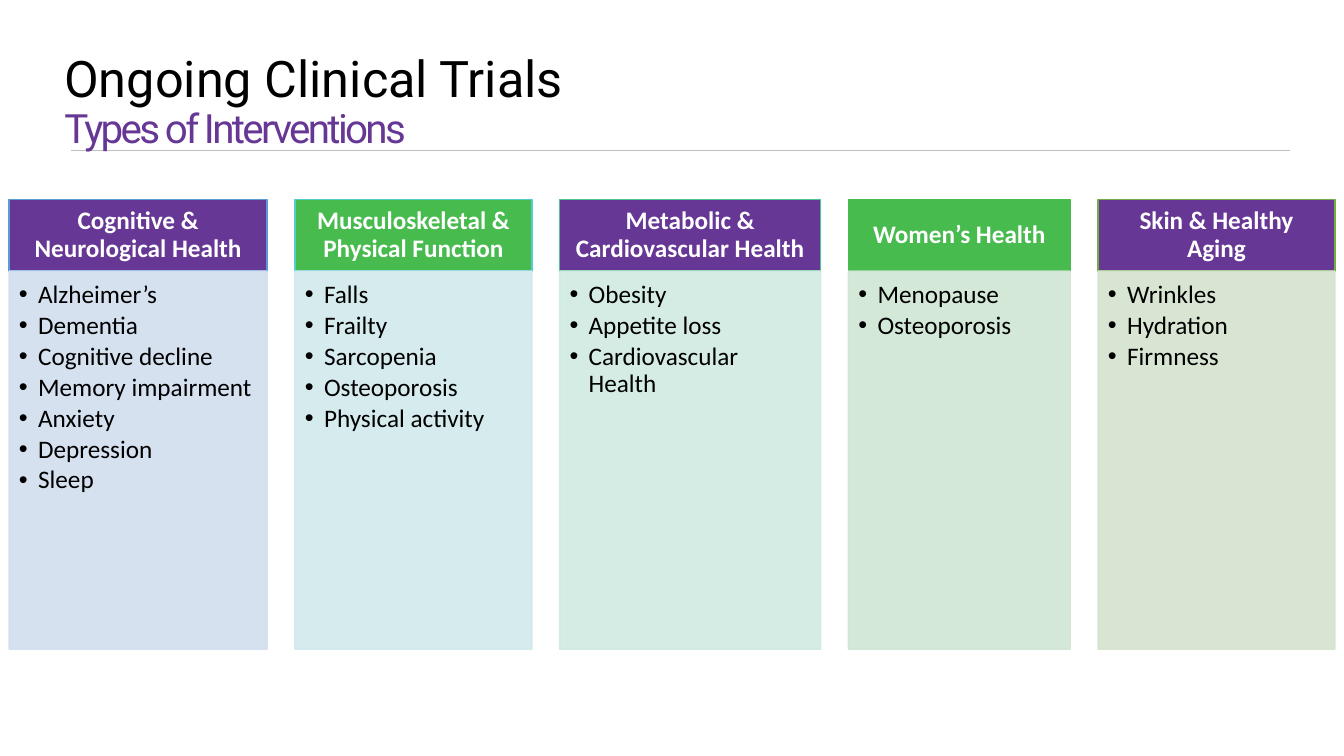
from lxml.etree import SubElement
from pptx import Presentation
from pptx.dml.color import RGBColor
from pptx.enum.shapes import MSO_CONNECTOR, MSO_SHAPE
from pptx.enum.text import MSO_ANCHOR, PP_ALIGN
from pptx.oxml.ns import qn
from pptx.util import Inches, Pt

COLORS = {
    "purple": "663795",
    "green": "48BB4F",
    "black": "000000",
    "white": "FFFFFF",
    "gray": "BFBFBF",
}
LEFT, RIGHT = 0.09, 13.24
TOP, HEAD, BODY = 1.98, 0.71, 3.75
TOPICS = [
    ("Cognitive & Neurological Health", 2.56, "purple", "5B9BD5", "D2DEEF",
     ["Alzheimer’s", "Dementia", "Cognitive decline", "Memory impairment",
      "Anxiety", "Depression", "Sleep"]),
    ("Musculoskeletal & Physical Function", 2.35, "green", "54CCCD", "D1E9ED",
     ["Falls", "Frailty", "Sarcopenia", "Osteoporosis", "Physical activity"]),
    ("Metabolic & Cardiovascular Health", 2.59, "purple", "4DC58D", "D0EAE1",
     ["Obesity", "Appetite loss", "Cardiovascular Health"]),
    ("Women’s Health", 2.2, "green", "48BB4F", "D0E6D4",
     ["Menopause", "Osteoporosis"]),
    ("Skin & Healthy Aging", 2.35, "purple", "70AD47", "D5E3CF",
     ["Wrinkles", "Hydration", "Firmness"]),
]


def rgb(color):
    return RGBColor.from_string(COLORS.get(color, color))


def style(para, size, color, name, bold=False):
    para.line_spacing = 0.9
    for run in para.runs:
        font = run.font
        font.size, font.name, font.bold = Pt(size), name, bold
        font.color.rgb = rgb(color)


def inset(frame, left, top, right, bottom):
    frame.margin_left, frame.margin_top = Inches(left), Inches(top)
    frame.margin_right, frame.margin_bottom = Inches(right), Inches(bottom)
    frame.word_wrap = True


def add_panel(slide, left, top, width, height, fill, line):
    panel = slide.shapes.add_shape(
        MSO_SHAPE.RECTANGLE, Inches(left), Inches(top), Inches(width), Inches(height))
    panel.shadow.inherit = False
    panel.fill.solid()
    panel.fill.fore_color.rgb = rgb(fill)
    panel.line.color.rgb = rgb(line)
    panel.line.width = Pt(1)
    return panel


def add_header(slide, left, width, text, fill, line):
    panel = add_panel(slide, left, TOP, width, HEAD, fill, line)
    frame = panel.text_frame
    inset(frame, 0.14, 0.08, 0.14, 0.08)
    frame.vertical_anchor = MSO_ANCHOR.MIDDLE
    frame.text = text
    para = frame.paragraphs[0]
    para.alignment = PP_ALIGN.CENTER
    style(para, 18, "white", "Calibri", True)


def add_bullet(para):
    props = para._p.get_or_add_pPr()
    props.set("marL", str(Inches(0.19)))
    props.set("indent", str(-Inches(0.19)))
    SubElement(props, qn("a:buFont"), typeface="Arial")
    SubElement(props, qn("a:buChar"), char="•")


def add_list(slide, left, width, items, tint):
    panel = add_panel(slide, left, TOP + HEAD, width, BODY, tint, tint)
    for color in panel._element.spPr.iter(qn("a:srgbClr")):
        SubElement(color, qn("a:alpha"), val="90000")
    frame = panel.text_frame
    inset(frame, 0.1, 0.1, 0.14, 0.16)
    frame.vertical_anchor = MSO_ANCHOR.TOP
    frame.text = "\n".join(items)
    for para in frame.paragraphs:
        add_bullet(para)
        para.level = 1
        para.alignment = PP_ALIGN.LEFT
        para.space_after = Pt(2.7)
        style(para, 18, "black", "Calibri")


def add_title(slide):
    box = slide.shapes.add_textbox(Inches(0.54), Inches(0.49), Inches(11.5), Inches(1.45))
    frame = box.text_frame
    frame.word_wrap = True
    frame.text = "Ongoing Clinical Trials\nTypes of Interventions"
    title, sub = frame.paragraphs
    style(title, 36, "black", "Roboto")
    style(sub, 28.8, "purple", "Roboto")
    sub.runs[0].font._element.set("spc", "-190")


def add_rule(slide):
    rule = slide.shapes.add_connector(
        MSO_CONNECTOR.STRAIGHT, Inches(0.7), Inches(1.49), Inches(12.79), Inches(1.49))
    rule.line.color.rgb = rgb("gray")
    rule.line.width = Pt(0.5)
    SubElement(rule._element.spPr, qn("a:effectLst"))


def main():
    deck = Presentation()
    deck.slide_width, deck.slide_height = Inches(13.33), Inches(7.5)
    slide = deck.slides.add_slide(deck.slide_layouts[6])
    add_rule(slide)
    gap = (RIGHT - LEFT - sum(topic[1] for topic in TOPICS)) / (len(TOPICS) - 1)
    left = LEFT
    for text, width, fill, line, tint, items in TOPICS:
        add_header(slide, left, width, text, fill, line)
        add_list(slide, left, width, items, tint)
        left += width + gap
    add_title(slide)
    deck.save("out.pptx")


if __name__ == "__main__":
    main()
